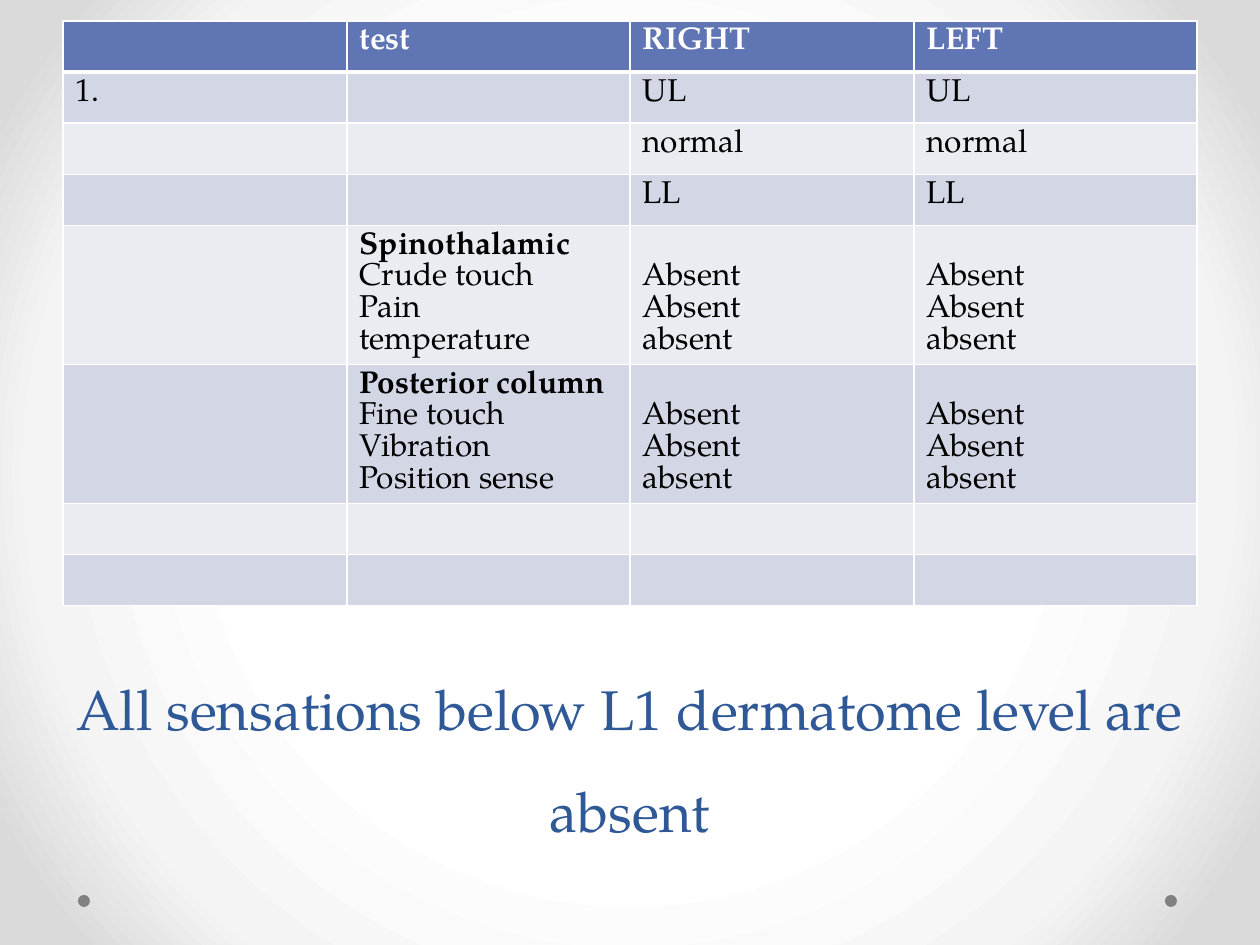
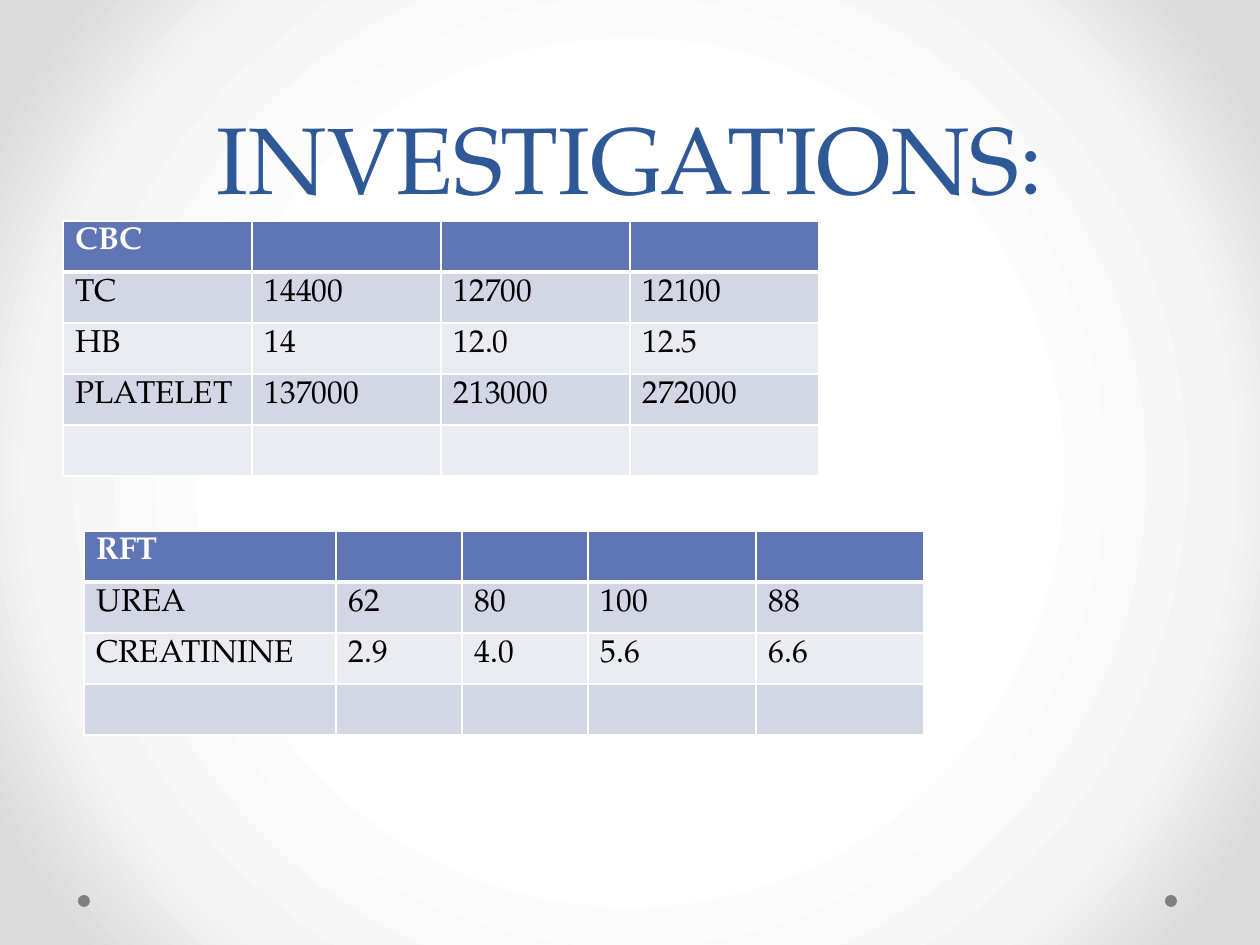
from lxml import etree
from pptx import Presentation
from pptx.dml.color import RGBColor
from pptx.enum.shapes import MSO_SHAPE
from pptx.enum.text import MSO_ANCHOR, MSO_AUTO_SIZE, PP_ALIGN
from pptx.oxml import parse_xml
from pptx.oxml.ns import nsdecls, qn
from pptx.util import Emu, Pt

OVAL = MSO_SHAPE.OVAL
TOP, BOTTOM = MSO_ANCHOR.TOP, MSO_ANCHOR.BOTTOM
LEFT, CENTER = PP_ALIGN.LEFT, PP_ALIGN.CENTER
FIXED_SIZE = MSO_AUTO_SIZE.NONE
TITLE_ONLY = 5

# Content
TRACT_NAMES = {"Spinothalamic", "Posterior column"}
LOST = ["Absent", "Absent", "absent"]
SENSORY_ROWS = [
    ["", "test", "RIGHT", "LEFT"],
    ["1.", "", "UL", "UL"],
    ["", "", "normal", "normal"],
    ["", "", "LL", "LL"],
    ["", ["Spinothalamic", "Crude touch", "Pain", "temperature"], LOST, LOST],
    ["", ["Posterior column", "Fine touch", "Vibration", "Position sense"], LOST, LOST],
    [""] * 4,
    [""] * 4,
]
CBC_ROWS = [
    ["CBC", "", "", ""],
    ["TC", "14400", "12700", "12100"],
    ["HB", "14", "12.0", "12.5"],
    ["PLATELET", "137000", "213000", "272000"],
    [""] * 4,
]
RFT_ROWS = [
    ["RFT", "", "", "", ""],
    ["UREA", "62", "80", "100", "88"],
    ["CREATININE", "2.9", "4.0", "5.6", "6.6"],
    [""] * 5,
]
SLIDES = [
    {
        "title": "All sensations below L1 dermatome level are absent",
        "title_top": 630, "title_size": 32,
        "tables": [{"at": (63, 21), "columns": [284, 283, 284, 283], "rows": SENSORY_ROWS}],
    },
    {
        "title": "INVESTIGATIONS:",
        "title_top": 0, "title_size": 54,
        "tables": [
            {"at": (63, 221), "columns": [189] * 4, "rows": CBC_ROWS},
            {"at": (84, 531), "columns": [252, 126, 126, 168, 168], "rows": RFT_ROWS},
        ],
    },
]

# Shared look
FONT = "TeX Gyre Pagella"
TITLE_BLUE = RGBColor(0x2F, 0x58, 0x97)
HEADER_BLUE = RGBColor(0x60, 0x76, 0xB4)
BANDS = [RGBColor(0xD2, 0xD6, 0xE5), RGBColor(0xEA, 0xEC, 0xF2)]
WHITE = RGBColor(0xFF, 0xFF, 0xFF)
BLACK = RGBColor(0, 0, 0)
DOT_GRAY = RGBColor(0x80, 0x80, 0x80)
GLOW = [(50, "FFFFFF"), (76, "F4F4F4"), (92, "DADADA")]

# Geometry in px
PX_PER_INCH = 126
PAGE_WIDTH, PAGE_HEIGHT = 1260, 945
TITLE_LEFT, TITLE_WIDTH, TITLE_HEIGHT = 63, 1134, 220
ROW_HEIGHT, TALL_ROW_HEIGHT = 51, 139
DOT_LEFTS, DOT_TOP, DOT_SIZE = (78, 1165), 895, 12


def px(length):
    return Emu(round(length * 914400 / PX_PER_INCH))


def write_text(frame, lines, size=18, color=BLACK, bold=False, align=LEFT, spacing=None):
    """Fill a text frame with one paragraph per line."""
    for index, line in enumerate(lines):
        para = frame.paragraphs[0] if index == 0 else frame.add_paragraph()
        para.alignment = align
        if spacing:
            para.line_spacing = Pt(spacing)
        if not line:
            continue
        span = para.add_run()
        span.text = line
        span.font.name = FONT
        span.font.size = Pt(size)
        span.font.color.rgb = color
        span.font.bold = bold or line in TRACT_NAMES


def paint_background(master):
    """Give every slide the same radial glow."""
    master.background.fill.gradient()
    stops = "".join(
        f'<a:gs pos="{place * 1000}"><a:srgbClr val="{color}"/></a:gs>' for place, color in GLOW
    )
    center = " ".join(f'{side}="50000"' for side in "ltrb")
    glow = parse_xml(
        f'<a:gradFill {nsdecls("a")} rotWithShape="1"><a:gsLst>{stops}</a:gsLst>'
        f'<a:path path="circle"><a:fillToRect {center}/></a:path></a:gradFill>'
    )
    linear = next(master.element.iter(qn("a:gradFill")))
    linear.getparent().replace(linear, glow)


def add_dots(page):
    for left in DOT_LEFTS:
        dot = page.shapes.add_shape(OVAL, px(left), px(DOT_TOP), px(DOT_SIZE), px(DOT_SIZE))
        dot.shadow.inherit = False
        dot.fill.solid()
        dot.fill.fore_color.rgb = DOT_GRAY
        dot.line.fill.background()


def set_title(page, text, top, size):
    title = page.shapes.title
    title.left, title.top = px(TITLE_LEFT), px(top)
    title.width, title.height = px(TITLE_WIDTH), px(TITLE_HEIGHT)
    frame = title.text_frame
    frame.word_wrap = True
    frame.auto_size = FIXED_SIZE
    frame.vertical_anchor = BOTTOM
    write_text(frame, [text], size=size, color=TITLE_BLUE, align=CENTER, spacing=58)


def add_borders(cell, row_index):
    """White rules all round, thicker between the header and the body."""
    widths = {"L": 1, "R": 1, "T": 3 if row_index == 1 else 1, "B": 3 if row_index == 0 else 1}
    properties = cell._tc.get_or_add_tcPr()
    for side, width in widths.items():
        line = etree.SubElement(properties, qn(f"a:ln{side}"), w=str(Pt(width)))
        fill = etree.SubElement(line, qn("a:solidFill"))
        etree.SubElement(fill, qn("a:srgbClr"), val=str(WHITE))


def add_data_table(page, at, columns, rows):
    heights = [
        TALL_ROW_HEIGHT if any(isinstance(content, list) for content in row) else ROW_HEIGHT
        for row in rows
    ]
    table = page.shapes.add_table(
        len(rows), len(columns), px(at[0]), px(at[1]), px(sum(columns)), px(sum(heights))
    ).table
    for column, width in zip(table.columns, columns):
        column.width = px(width)
    for row_index, (row, height) in enumerate(zip(rows, heights)):
        table.rows[row_index].height = px(height)
        is_header = row_index == 0
        for column_index, content in enumerate(row):
            cell = table.cell(row_index, column_index)
            add_borders(cell, row_index)
            cell.fill.solid()
            cell.fill.fore_color.rgb = HEADER_BLUE if is_header else BANDS[(row_index - 1) % 2]
            # Findings line up with the last lines of the tract list
            is_list = isinstance(content, list)
            cell.vertical_anchor = BOTTOM if is_list else TOP
            write_text(cell.text_frame, content if is_list else [content],
                       color=WHITE if is_header else BLACK, bold=is_header)


def main():
    deck = Presentation()
    deck.slide_width, deck.slide_height = px(PAGE_WIDTH), px(PAGE_HEIGHT)
    paint_background(deck.slide_master)
    for content in SLIDES:
        page = deck.slides.add_slide(deck.slide_layouts[TITLE_ONLY])
        add_dots(page)
        set_title(page, content["title"], content["title_top"], content["title_size"])
        for table in content["tables"]:
            add_data_table(page, **table)
    deck.save("out.pptx")


if __name__ == "__main__":
    main()
